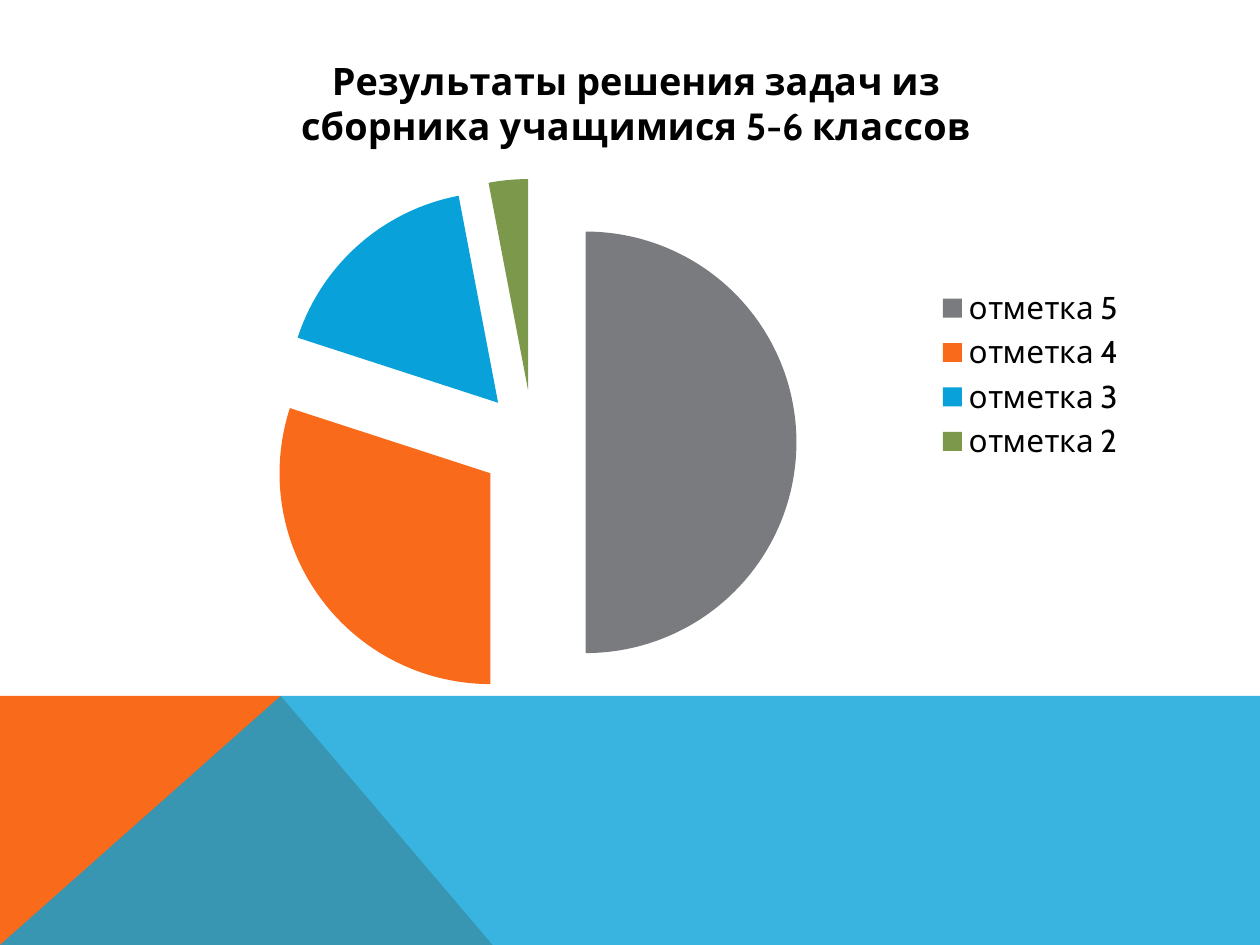
from lxml.etree import SubElement
from pptx import Presentation
from pptx.chart.data import CategoryChartData
from pptx.dml.color import RGBColor
from pptx.enum.chart import XL_CHART_TYPE as ChartType, XL_LEGEND_POSITION as LegendPosition
from pptx.oxml import parse_xml
from pptx.oxml.ns import nsdecls, qn
from pptx.util import Cm, Pt

BLACK = RGBColor(0x00, 0x00, 0x00)
GREY = RGBColor(0x79, 0x7B, 0x7E)
ORANGE = RGBColor(0xF9, 0x6A, 0x1B)
BLUE = RGBColor(0x08, 0xA1, 0xD9)
GREEN = RGBColor(0x7C, 0x98, 0x4A)

WIDTH, HEIGHT = 25.4, 19.05
BAND_TOP = 14.03
PEAK = 5.66
ORANGE_RIGHT = 9.93

HEADING = "Результаты решения задач из сборника учащимися 5-6 классов"
MARKS = [
    ("отметка 5", 50, GREY),
    ("отметка 4", 30, ORANGE),
    ("отметка 3", 17, BLUE),
    ("отметка 2", 3, GREEN),
]


def format_font(font, size, bold=False, color=BLACK, name="Cabin"):
    font.name, font.size, font.bold = name, Pt(size), bold
    font.color.rgb = color


def write_text(frame, text, **font_format):
    frame.text = text
    for para in frame.paragraphs:
        for span in para.runs:
            format_font(span.font, **font_format)


class SlideBuilder:
    def __init__(self, page, text_size=18):
        self.page = page
        self.text_size = text_size

    def polygon(self, points, color, opacity=100):
        """Draw a closed outline through points in cm; opacity is in percent."""
        corners = [(Cm(x), Cm(y)) for x, y in points]
        builder = self.page.shapes.build_freeform(*corners[0])
        builder.add_line_segments(corners[1:], close=True)
        shape = builder.convert_to_shape()
        shape.shadow.inherit = False
        shape.line.fill.background()
        shape.fill.solid()
        shape.fill.fore_color.rgb = color
        if opacity < 100:
            rgb = shape.fill._xPr.find(".//" + qn("a:srgbClr"))
            SubElement(rgb, qn("a:alpha"), val=str(opacity * 1000))

    def pie(self, left, top, width, height, title, slices, explosion):
        labels, values, colors = zip(*slices)
        data = CategoryChartData()
        data.categories = labels
        data.add_series(title, values)
        chart = self.page.shapes.add_chart(
            ChartType.PIE, Cm(left), Cm(top), Cm(width), Cm(height), data
        ).chart
        format_font(chart.font, self.text_size)

        chart.has_title = True
        write_text(chart.chart_title.text_frame, title, size=self.text_size * 1.2, bold=True)
        chart.chart_title.include_in_layout = False

        chart.has_legend = True
        chart.legend.position = LegendPosition.RIGHT
        chart.legend.include_in_layout = False
        format_font(chart.legend.font, self.text_size)

        plot = chart.plots[0]
        plot.vary_by_categories = True
        series = plot.series[0]
        series._element.find(qn("c:tx")).addnext(
            parse_xml(f'<c:explosion {nsdecls("c")} val="{explosion}"/>')
        )
        for index, color in enumerate(colors):
            fill = series.points[index].format.fill
            fill.solid()
            fill.fore_color.rgb = color


def main():
    deck = Presentation()
    deck.slide_width, deck.slide_height = Cm(WIDTH), Cm(HEIGHT)
    blank_layout = deck.slide_layouts[6]
    slide = SlideBuilder(deck.slides.add_slide(blank_layout))

    slide.polygon(
        [(0, HEIGHT), (0, BAND_TOP), (PEAK, BAND_TOP), (ORANGE_RIGHT, HEIGHT)], ORANGE
    )
    slide.polygon(
        [(0, HEIGHT), (PEAK, BAND_TOP), (WIDTH, BAND_TOP), (WIDTH, HEIGHT)], BLUE, opacity=80
    )
    slide.pie(2.69, 0.53, 20.27, 14.05, HEADING, MARKS, explosion=25)
    deck.save("out.pptx")


if __name__ == "__main__":
    main()
